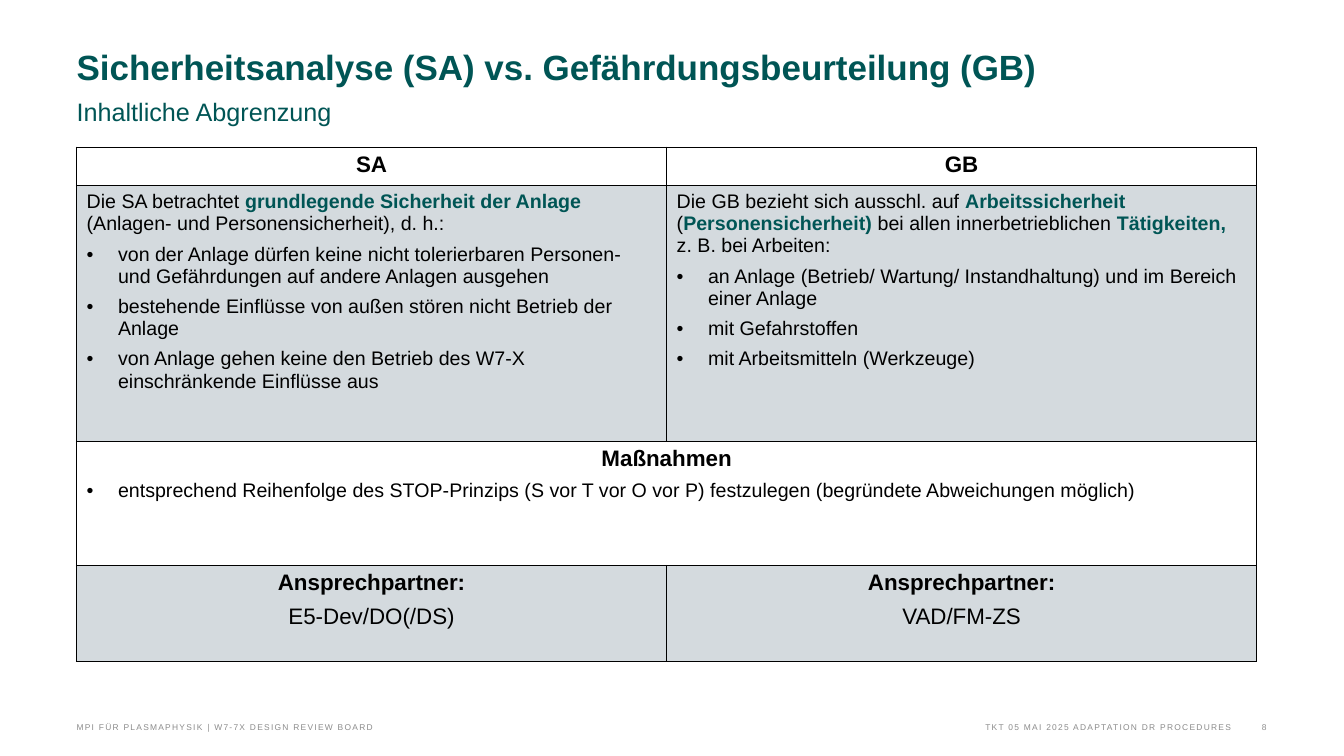
import pptx
import pptx.dml.color
import pptx.enum.text
import pptx.oxml
import pptx.oxml.ns
import pptx.util
from pptx.util import Cm

COLORS = {"green": "005555", "black": "000000", "grey": "8C8C8C", "slate": "29485D"}
ALIGN = pptx.enum.text.PP_ALIGN
ANCHOR = pptx.enum.text.MSO_ANCHOR

FRAME = {"margin_left": 0, "margin_right": 0, "margin_top": 0, "margin_bottom": 0,
         "word_wrap": True, "auto_size": pptx.enum.text.MSO_AUTO_SIZE.NONE}
STYLES = {
    "heading": {"size": 16, "bold": True, "align": ALIGN.CENTER},
    "contact": {"size": 16, "bold": False, "align": ALIGN.CENTER},
    "body": {"size": 14, "bold": False, "align": ALIGN.LEFT},
    "bullet": {"size": 14, "bold": False, "align": ALIGN.LEFT},
}


def add_span(para, text, size, color, bold=False):
    span = para.add_run()
    span.text = text
    values = {"name": "Arial", "size": pptx.util.Pt(size), "bold": bold}
    for name, value in values.items():
        setattr(span.font, name, value)
    span.font.color.rgb = pptx.dml.color.RGBColor.from_string(COLORS[color])
    return span


def drawing_xml(content):
    """Parse one DrawingML element; {ns} in the content stands for its namespace."""
    return pptx.oxml.parse_xml(content.format(ns=pptx.oxml.ns.nsdecls("a")))


deck = pptx.Presentation()
deck.slide_width, deck.slide_height = Cm(33.87), Cm(19.05)
page = deck.slides.add_slide(deck.slide_layouts[5])

# Title and subtitle
title = page.shapes.title
title.left, title.top, title.width, title.height = Cm(1.93), Cm(1.22), Cm(26.59), Cm(2.49)
for name, value in FRAME.items():
    setattr(title.text_frame, name, value)
title.text_frame.vertical_anchor = ANCHOR.TOP
para = title.text_frame.paragraphs[0]
para.alignment = ALIGN.LEFT
para.line_spacing = pptx.util.Pt(28)
add_span(para, "Sicherheitsanalyse (SA) vs. Gefährdungsbeurteilung (GB)", 25, "green", True)
para.add_line_break()
add_span(para, "Inhaltliche Abgrenzung", 18, "green")

# Footer line
footers = [
    (1.93, 16.92, ALIGN.LEFT, "MPI FÜR PLASMAPHYSIK | W7-7X DESIGN REVIEW BOARD"),
    (11.46, 19.56, ALIGN.RIGHT, "TKT 05 MAI 2025 ADAPTATION DR PROCEDURES"),
    (31.01, 0.91, ALIGN.RIGHT, "8"),
]
for left, width, align, text in footers:
    box = page.shapes.add_textbox(Cm(left), Cm(18.03), Cm(width), Cm(0.41))
    for name, value in FRAME.items():
        setattr(box.text_frame, name, value)
    box.text_frame.vertical_anchor = ANCHOR.BOTTOM
    para = box.text_frame.paragraphs[0]
    para.alignment = align
    span = add_span(para, text, 6, "grey")
    span.font._element.set("spc", "90")

# Comparison table; ** switches the green emphasis on and off
rows = [
    (0.97, False, [[("heading", "SA")], [("heading", "GB")]]),
    (6.45, True, [
        [("body", "Die SA betrachtet **grundlegende Sicherheit der Anlage **"
                  "(Anlagen- und Personensicherheit), d. h.:"),
         ("bullet", "von der Anlage dürfen keine nicht tolerierbaren Personen- "
                    "und Gefährdungen auf andere Anlagen ausgehen"),
         ("bullet", "bestehende Einflüsse von außen stören nicht Betrieb der Anlage"),
         ("bullet", "von Anlage gehen keine den Betrieb des W7-X "
                    "einschränkende Einflüsse aus")],
        [("body", "Die GB bezieht sich ausschl. auf **Arbeitssicherheit **("
                  "**Personensicherheit)** bei allen innerbetrieblichen "
                  "**Tätigkeiten, **z. B. bei Arbeiten:"),
         ("bullet", "an Anlage (Betrieb/ Wartung/ Instandhaltung) und im Bereich "
                    "einer Anlage"),
         ("bullet", "mit Gefahrstoffen"),
         ("bullet", "mit Arbeitsmitteln (Werkzeuge)")],
    ]),
    (3.12, False, [
        [("heading", "Maßnahmen"),
         ("bullet", "entsprechend Reihenfolge des STOP-Prinzips (S vor T vor O vor P) "
                    "festzulegen (begründete Abweichungen möglich)")],
        [],
    ]),
    (2.41, True, [
        [("heading", "Ansprechpartner:"), ("contact", "E5-Dev/DO(/DS)")],
        [("heading", "Ansprechpartner:"), ("contact", "VAD/FM-ZS")],
    ]),
]
table = page.shapes.add_table(len(rows), 2, Cm(1.93), Cm(3.71), Cm(29.74), Cm(12.95)).table
table.first_row = table.horz_banding = False
for column in table.columns:
    column.width = Cm(14.87)
table.cell(2, 0).merge(table.cell(2, 1))

for row_index, (height, shaded, contents) in enumerate(rows):
    table.rows[row_index].height = Cm(height)
    for column_index, content in enumerate(contents):
        cell = table.cell(row_index, column_index)
        properties = cell._tc.get_or_add_tcPr()
        if shaded:
            cell.fill.solid()
            cell.fill.fore_color.rgb = pptx.dml.color.RGBColor.from_string(COLORS["slate"])
            color = properties.find(".//" + pptx.oxml.ns.qn("a:srgbClr"))
            color.append(drawing_xml('<a:alpha {ns} val="20000"/>'))
        else:
            cell.fill.background()
        for position, side in enumerate("LRTB"):
            properties.insert(position, drawing_xml(
                f'<a:ln{side} {{ns}} w="12700"><a:solidFill>'
                f'<a:srgbClr val="{COLORS["black"]}"/></a:solidFill></a:ln{side}>'))

        for index, (kind, text) in enumerate(content):
            frame = cell.text_frame
            para = frame.paragraphs[0] if index == 0 else frame.add_paragraph()
            style = STYLES[kind]
            para.alignment = style["align"]
            para.space_after = pptx.util.Pt(6)
            if kind == "bullet":
                layout = para._p.get_or_add_pPr()
                layout.set("marL", str(Cm(0.79)))
                layout.set("indent", str(-Cm(0.79)))
                layout.append(drawing_xml('<a:buFont {ns} typeface="Arial"/>'))
                layout.append(drawing_xml('<a:buChar {ns} char="•"/>'))
            for part, words in enumerate(text.split("**")):
                emphasis = part % 2 == 1
                add_span(para, words, style["size"], "green" if emphasis else "black",
                         emphasis or style["bold"])

deck.save("out.pptx")
